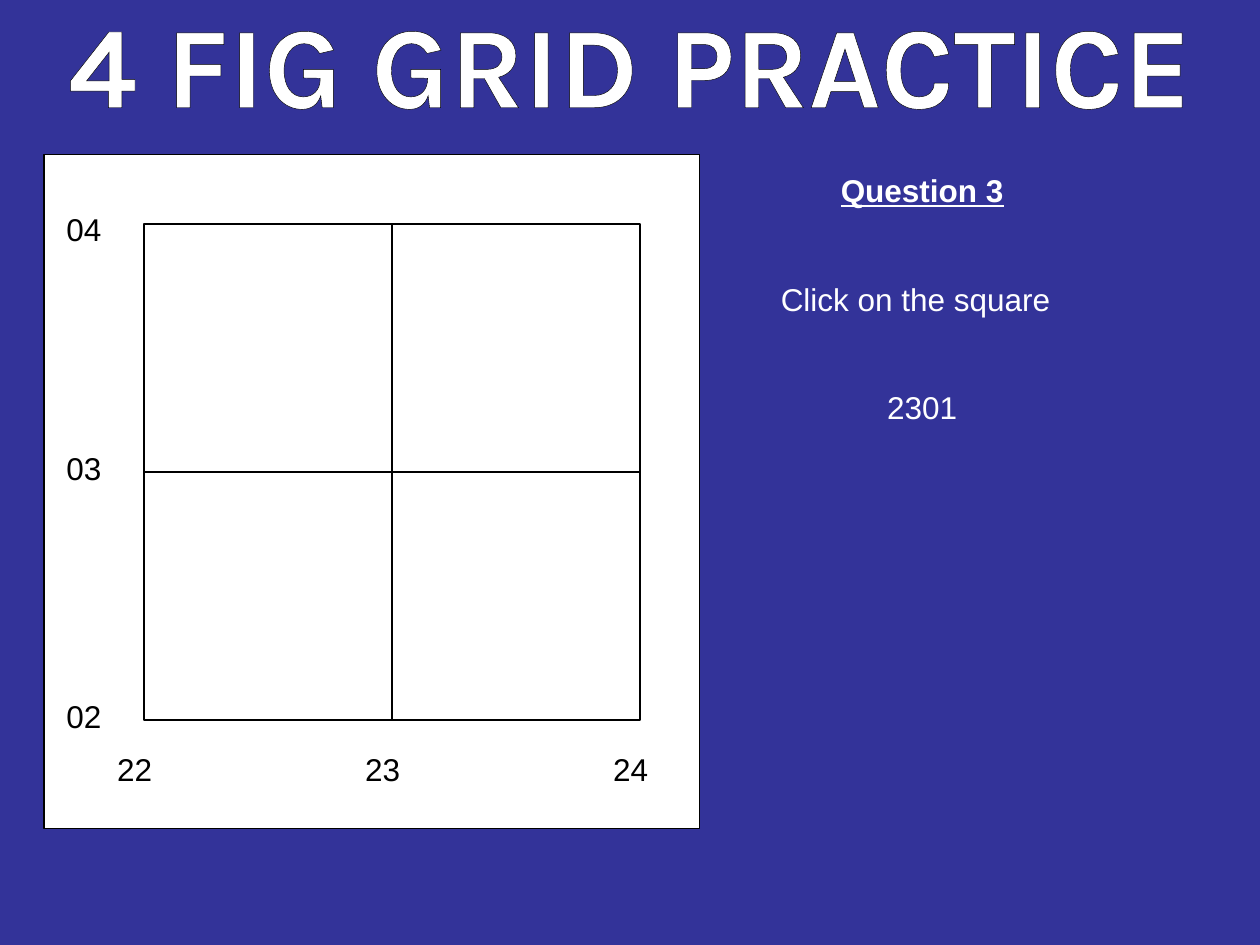
from lxml import etree
from pptx import Presentation
from pptx.dml.color import RGBColor
from pptx.enum.shapes import MSO_CONNECTOR, MSO_SHAPE
from pptx.enum.text import PP_ALIGN
from pptx.oxml.ns import qn
from pptx.util import Cm, Pt

STRAIGHT = MSO_CONNECTOR.STRAIGHT
RECTANGLE = MSO_SHAPE.RECTANGLE
LEFT, CENTER = PP_ALIGN.LEFT, PP_ALIGN.CENTER

BLUE = RGBColor(0x33, 0x33, 0x99)
WHITE = RGBColor(0xFF, 0xFF, 0xFF)
BLACK = RGBColor(0, 0, 0)

BODY = {"name": "Arial", "size": Pt(18)}
HEADING = {**BODY, "bold": True, "underline": True}
TITLE = {"name": "Karla", "size": Pt(66), "bold": True}

TITLE_LINE = [("4 FIG GRID PRACTICE", CENTER, TITLE)]
QUESTION = [
    ("Question 3", CENTER, HEADING),
    ("Click on the square", LEFT, BODY),
    ("2301", CENTER, BODY),
]
QUESTION_GAP = Pt(40.4)
EASTINGS = ["22", "23", "24"]
NORTHINGS = [("04", 4.11), ("03", 8.92), ("02", 13.92)]

PANEL = (0.89, 3.12, 13.21, 13.59)
GRID_LEFT, GRID_TOP, CELL = 2.9, 4.52, 5
GRID_SIZE = 2 * CELL
LABEL_SIZE = (1.4, 1.02)
EASTING_LEFT, EASTING_TOP = 2.11, 14.99
NORTHING_LEFT = 1.09


def add_box(page, place, lines, colour, gap=Pt(0)):
    box = page.shapes.add_textbox(*map(Cm, place))
    frame = box.text_frame
    frame.word_wrap = True
    for index, (text, align, style) in enumerate(lines):
        para = frame.add_paragraph() if index else frame.paragraphs[0]
        para.alignment = align
        para.space_before = gap if index else Pt(0)
        span = para.add_run()
        span.text = text
        for key, value in style.items():
            setattr(span.font, key, value)
        span.font.color.rgb = colour
    return box


def add_rectangle(page, place, weight, fill=None):
    shape = page.shapes.add_shape(RECTANGLE, *map(Cm, place))
    shape.shadow.inherit = False
    if fill is None:
        shape.fill.background()
    else:
        shape.fill.solid()
        shape.fill.fore_color.rgb = fill
    shape.line.color.rgb = BLACK
    shape.line.width = Pt(weight)


def add_line(page, *ends):
    line = page.shapes.add_connector(STRAIGHT, *map(Cm, ends))
    line.line.color.rgb = BLACK
    line.line.width = Pt(1)
    etree.SubElement(line._element.spPr, qn("a:effectLst"))


def outline_text(box):
    properties = box.text_frame.paragraphs[0].runs[0].font._element
    outline = etree.Element(qn("a:ln"), w=str(Pt(0.75)))
    fill = etree.SubElement(outline, qn("a:solidFill"))
    etree.SubElement(fill, qn("a:srgbClr"), val=str(BLACK))
    properties.insert(0, outline)


def main():
    deck = Presentation()
    deck.slide_width, deck.slide_height = Cm(25.4), Cm(19.05)
    page = deck.slides.add_slide(deck.slide_layouts[6])
    page.background.fill.solid()
    page.background.fill.fore_color.rgb = BLUE

    add_rectangle(page, PANEL, 0.75, WHITE)
    add_rectangle(page, (GRID_LEFT, GRID_TOP, GRID_SIZE, GRID_SIZE), 1)
    middle_x, middle_y = GRID_LEFT + CELL, GRID_TOP + CELL
    add_line(page, middle_x, GRID_TOP, middle_x, GRID_TOP + GRID_SIZE)
    add_line(page, GRID_LEFT, middle_y, GRID_LEFT + GRID_SIZE, middle_y)

    labels = [(text, EASTING_LEFT + column * CELL, EASTING_TOP)
              for column, text in enumerate(EASTINGS)]
    labels += [(text, NORTHING_LEFT, top) for text, top in NORTHINGS]
    for text, left, top in labels:
        add_box(page, (left, top, *LABEL_SIZE), [(text, LEFT, BODY)], BLACK)

    add_box(page, (15.49, 3.33, 6.2, 6.76), QUESTION, WHITE, QUESTION_GAP)
    title = add_box(page, (0, -0.28, 25.4, 3.07), TITLE_LINE, WHITE)
    outline_text(title)

    deck.save("out.pptx")


if __name__ == "__main__":
    main()
